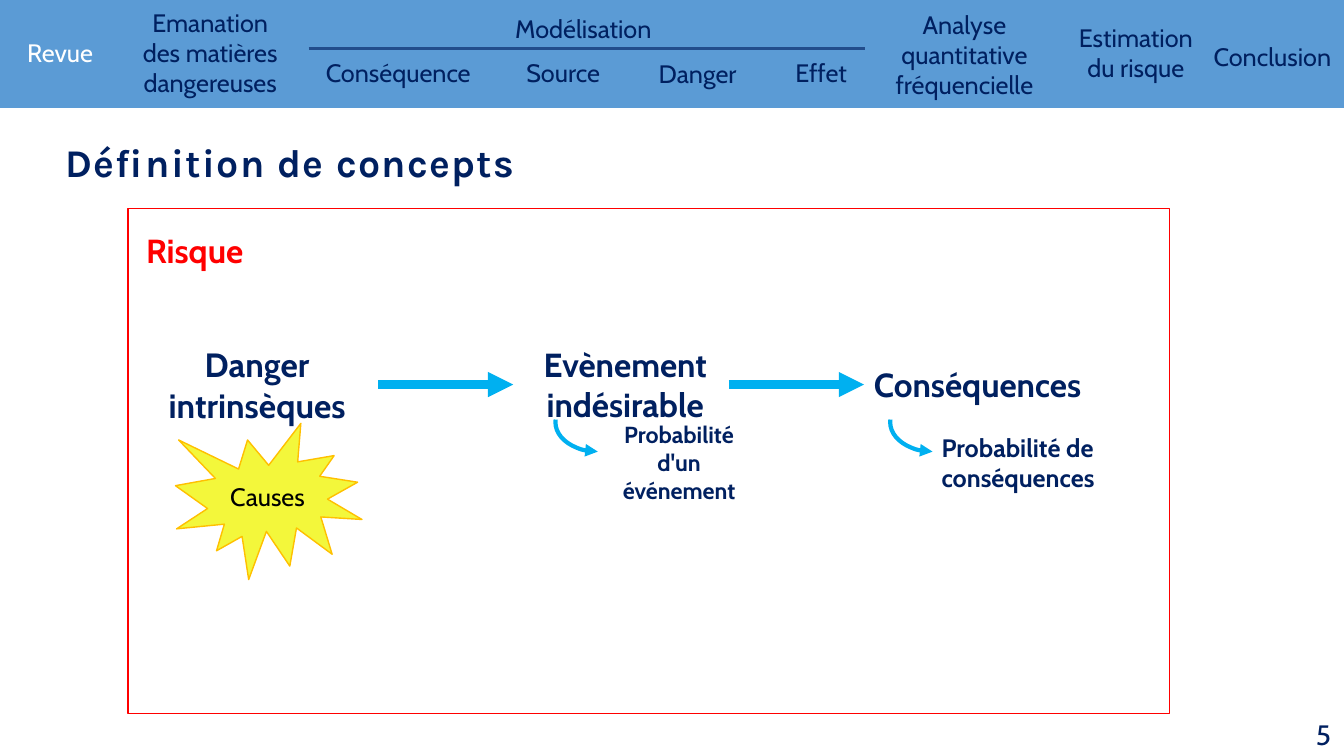
import pptx
import pptx.dml.color
import pptx.enum.shapes
import pptx.enum.text
import pptx.oxml.ns
import pptx.util
from dataclasses import dataclass
from lxml import etree

Inches = pptx.util.Inches
SHAPE = pptx.enum.shapes.MSO_SHAPE
ALIGN = pptx.enum.text.PP_ALIGN
ANCHOR = pptx.enum.text.MSO_ANCHOR


@dataclass(frozen=True)
class Theme:
    body_font: str = "Cabin"
    title_font: str = "Karla"
    navy: str = "002060"
    white: str = "FFFFFF"
    black: str = "000000"
    red: str = "FF0000"
    bar: str = "5B9BD5"
    rule: str = "224D8C"
    arrow: str = "00B0F0"
    burst: str = "F3F73B"
    burst_edge: str = "FFC000"
    title: float = 28
    concept: float = 24
    heading: float = 23.8
    number: float = 20
    label: float = 18
    small: float = 16.6


THEME = Theme()

# Content: text, box (left, top, width, height)
TITLE = "Définition de concepts"
PAGE_NUMBER = "5"
CURRENT_SECTION = "Revue"
SECTIONS = [
    ("Revue", (0.17, 0.32, 1.11, 0.4)),
    ("Emanation des matières dangereuses", (1.27, 0.02, 1.63, 1)),
    ("Modélisation", (3.06, 0.08, 5.45, 0.4)),
    ("Conséquence", (3.06, 0.52, 1.78, 0.4)),
    ("Source", (4.59, 0.52, 1.99, 0.4)),
    ("Danger", (6.1, 0.53, 1.64, 0.38)),
    ("Effet", (7.27, 0.52, 1.75, 0.39)),
    ("Analyse quantitative fréquencielle", (8.69, 0.04, 1.75, 0.96)),
    ("Estimation\ndu risque", (10.39, 0.17, 1.75, 0.69)),
    ("Conclusion", (11.84, 0.36, 1.56, 0.4)),
]
# Concepts: text, left, width, size, alignment
CONCEPTS = [
    ("Danger\nintrinsèques", 1.35, 2.4, THEME.concept, ALIGN.CENTER),
    ("Evènement indésirable", 5.09, 2.22, THEME.heading, ALIGN.CENTER),
    ("Conséquences", 8.57, 2.6, THEME.heading, ALIGN.LEFT),
]
PROBABILITIES = [
    ("Probabilité d'un événement", 5.9, 1.67, THEME.small, ALIGN.CENTER),
    ("Probabilité de conséquences", 9.24, 2.19, THEME.label, ALIGN.LEFT),
]
CONCEPT_TOP, PROBABILITY_TOP, ROW_HEIGHT = 3.42, 4.19, 0.79
CURVE_LEFTS = [5.64, 8.96]


def rgb(value):
    return pptx.dml.color.RGBColor.from_string(value)


def write(box, text, size, color, align=ALIGN.LEFT, bold=False,
          font=THEME.body_font, anchor=ANCHOR.MIDDLE):
    frame = box.text_frame
    frame.text = text
    frame.word_wrap = True
    frame.auto_size = pptx.enum.text.MSO_AUTO_SIZE.NONE
    frame.vertical_anchor = anchor
    for para in frame.paragraphs:
        para.alignment = align
        for span in para.runs:
            span.font.name = font
            span.font.size = pptx.util.Pt(size)
            span.font.bold = bold
            span.font.color.rgb = rgb(color)


def add_text(page, bounds, *args, **style):
    box = page.shapes.add_textbox(*map(Inches, bounds))
    write(box, *args, **style)
    return box


def add_shape(page, kind, bounds, fill=None, line=None, width=1):
    shape = page.shapes.add_shape(kind, *map(Inches, bounds))
    shape.shadow.inherit = False
    if fill:
        shape.fill.solid()
        shape.fill.fore_color.rgb = rgb(fill)
    else:
        shape.fill.background()
    if line:
        style_line(shape, line, width)
    else:
        shape.line.fill.background()
    return shape


def style_line(shape, color, width):
    shape.line.color.rgb = rgb(color)
    shape.line.width = pptx.util.Pt(width)


def add_arrowhead(shape):
    tail = etree.SubElement(shape.line._get_or_add_ln(), pptx.oxml.ns.qn("a:tailEnd"))
    tail.set("type", "triangle")


def add_line(page, start, end, color, width):
    line = page.shapes.add_connector(
        pptx.enum.shapes.MSO_CONNECTOR.STRAIGHT, *map(Inches, start + end))
    style_line(line, color, width)
    etree.SubElement(line._element.spPr, pptx.oxml.ns.qn("a:effectLst"))
    return line


def add_row(page, entries, top):
    return [add_text(page, (left, top, width, ROW_HEIGHT), text, size,
                     THEME.navy, align, bold=True)
            for text, left, width, size, align in entries]


def add_navigation(page):
    add_shape(page, SHAPE.RECTANGLE, (0, 0, 13.33, 1.07), fill=THEME.bar)
    for text, bounds in SECTIONS:
        current = text == CURRENT_SECTION
        add_text(page, bounds, text, THEME.label,
                 THEME.white if current else THEME.navy,
                 ALIGN.LEFT if current else ALIGN.CENTER, anchor=ANCHOR.TOP)
    add_line(page, (3.06, 0.48), (8.58, 0.48), THEME.rule, 2.25)


def add_diagram(page):
    # Concepts and their probabilities
    probabilities_first = add_row(page, PROBABILITIES[:1], PROBABILITY_TOP)
    danger, event, consequences = add_row(page, CONCEPTS, CONCEPT_TOP)
    add_row(page, PROBABILITIES[len(probabilities_first):], PROBABILITY_TOP)

    # Straight arrows
    middle = CONCEPT_TOP + ROW_HEIGHT / 2
    to_event = add_line(page, (3.75, middle), (5.09, middle), THEME.arrow, 6)
    to_event.begin_connect(danger, 3)
    to_event.end_connect(event, 1)
    to_consequences = add_line(page, (7.23, middle), (8.57, middle), THEME.arrow, 6)
    to_consequences.end_connect(consequences, 1)
    for arrow in (to_event, to_consequences):
        add_arrowhead(arrow)

    # Causes burst
    burst = add_shape(page, SHAPE.EXPLOSION1, (1.74, 4.2, 1.85, 1.55),
                      THEME.burst, THEME.burst_edge)
    write(burst, "Causes", THEME.label, THEME.black, ALIGN.CENTER)

    # Curved arrows
    for left in CURVE_LEFTS:
        curve = add_shape(page, SHAPE.ARC, (left, 3.77, 0.58, 0.84),
                          line=THEME.arrow, width=3)
        curve.adjustments[0] = 159.7
        curve.rotation = 90
        curve._element.spPr.find(pptx.oxml.ns.qn("a:xfrm")).set("flipV", "1")
        add_arrowhead(curve)

    # Risk frame
    add_shape(page, SHAPE.RECTANGLE, (1.27, 2.07, 10.33, 5.01), line=THEME.red)
    add_text(page, (1.35, 2.09, 1.38, ROW_HEIGHT), "Risque", THEME.heading,
             THEME.red, bold=True)


def add_title(page):
    title = page.shapes.title
    title.left, title.top, title.width, title.height = map(
        Inches, (0.55, 1.32, 12.26, 0.6))
    write(title, TITLE, THEME.title, THEME.navy, bold=True,
          font=THEME.title_font, anchor=ANCHOR.TOP)
    # Letter spacing in hundredths of a point
    title.text_frame.paragraphs[0].runs[0].font._element.set("spc", "100")


def main():
    deck = pptx.Presentation()
    deck.slide_width, deck.slide_height = Inches(13.33), Inches(7.5)
    page = deck.slides.add_slide(deck.slide_layouts[5])
    add_navigation(page)
    add_title(page)
    add_diagram(page)
    add_text(page, (10.19, 7.08, 3.11, 0.4), PAGE_NUMBER, THEME.number,
             THEME.navy, ALIGN.RIGHT)
    deck.save("out.pptx")


if __name__ == "__main__":
    main()
